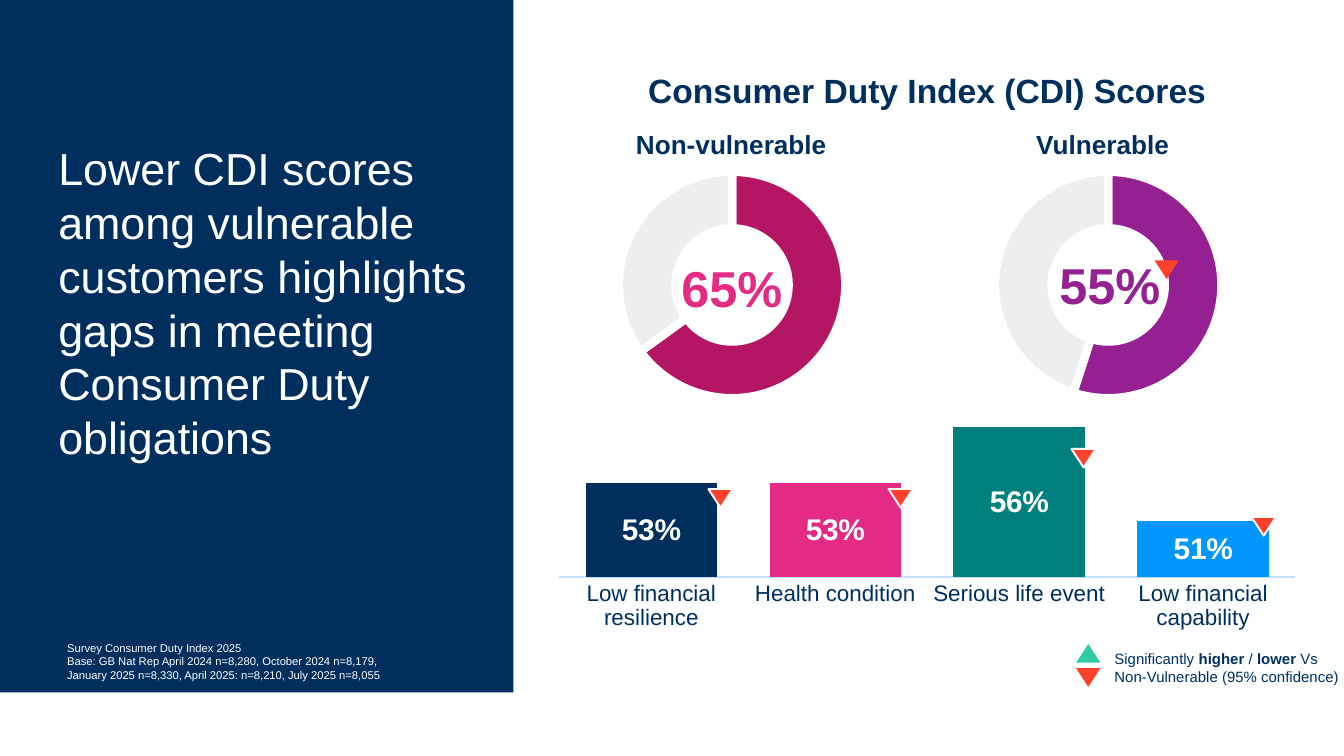
from pptx import Presentation
from pptx.chart.data import CategoryChartData
from pptx.dml.color import RGBColor
from pptx.enum.chart import XL_CHART_TYPE, XL_LABEL_POSITION, XL_TICK_MARK
from pptx.enum.shapes import MSO_SHAPE
from pptx.enum.text import MSO_ANCHOR, PP_ALIGN
from pptx.oxml import parse_xml
from pptx.oxml.ns import nsdecls
from pptx.util import Pt

DOUGHNUT, COLUMN = XL_CHART_TYPE.DOUGHNUT, XL_CHART_TYPE.COLUMN_CLUSTERED
RECT, TRIANGLE = MSO_SHAPE.RECTANGLE, MSO_SHAPE.ISOSCELES_TRIANGLE
LEFT, CENTER = PP_ALIGN.LEFT, PP_ALIGN.CENTER
TOP, LABEL_CENTER, NO_TICK = MSO_ANCHOR.TOP, XL_LABEL_POSITION.CENTER, XL_TICK_MARK.NONE

FONT, NAVY, WHITE, RED, GREEN = "Arial", "002F5E", "FEFFFF", "FF412C", "31CAA8"

TITLE = "Lower CDI scores among vulnerable customers highlights gaps in meeting Consumer Duty obligations"
HEADING = "Consumer Duty Index (CDI) Scores"
SOURCE = [
    [("Survey Consumer Duty Index 2025", False)],
    [("Base: GB Nat Rep April 2024 n=8,280, October 2024 n=8,179, "
      "January 2025 n=8,330, April 2025: n=8,210, July 2025 n=8,055", False)],
]
KEY = [[("Significantly ", False), ("higher", True), (" / ", False), ("lower ", True),
        ("Vs Non-Vulnerable (95% confidence)", False)]]
DONUTS = [
    ("Non-vulnerable", 65, "B51663", "E52A84", 303, (317.5, 148.5), (357, 137.5)),
    ("Vulnerable", 55, "942092", "942092", 504.5, (520, 141.5), (559.5, 136)),
]
BARS = [
    ("Low financial resilience", 0.53, NAVY, (379.5, 262)),
    ("Health condition", 0.53, "E52A84", (476, 262)),
    ("Serious life event", 0.56, "007F7F", (574, 240.5)),
    ("Low financial capability", 0.51, "0096FF", (670.5, 277)),
]


def rgb(code):
    """Turn a hex string into a colour."""
    return RGBColor.from_string(code)


def style(font, size, color, bold=False):
    """Set the face, size, colour and weight of a font."""
    font.name, font.size, font.bold = FONT, Pt(size), bold
    font.color.rgb = rgb(color)


def write(sp, paras, size, color, align=LEFT, inset=0):
    """Fill a shape with paragraphs made of (text, bold) runs."""
    tf = sp.text_frame
    tf.word_wrap, tf.vertical_anchor = True, TOP
    tf.margin_left = tf.margin_right = Pt(inset * 2)
    tf.margin_top = tf.margin_bottom = Pt(inset)
    for i, runs in enumerate(paras):
        p = tf.add_paragraph() if i else tf.paragraphs[0]
        p.alignment, p.line_spacing = align, Pt(size * 1.2)
        p.space_before = p.space_after = Pt(0)
        for text, bold in runs:
            r = p.add_run()
            r.text = text
            style(r.font, size, color, bold)


def add_text(s, box, paras, size, color, align=LEFT, inset=0):
    """Add a text box."""
    write(s.shapes.add_textbox(*map(Pt, box)), paras, size, color, align, inset)


def add_block(s, kind, box, color, outline=None, turn=0):
    """Add a filled preset shape."""
    sp = s.shapes.add_shape(kind, *map(Pt, box))
    sp.shadow.inherit, sp.rotation = False, turn
    sp.fill.solid()
    sp.fill.fore_color.rgb = rgb(color)
    if outline:
        sp.line.color.rgb, sp.line.width = rgb(outline), Pt(1)
    else:
        sp.line.fill.background()


def add_marker(s, at, color=RED, outline=None, turn=180):
    """Add a significance triangle, pointing down unless turned."""
    add_block(s, TRIANGLE, (*at, 13, 10), color, outline, turn)


def add_chart(s, kind, box, cats, values, colors, fmt="General"):
    """Add a one-series chart with a colour for each point."""
    data = CategoryChartData(number_format=fmt)
    data.categories = cats
    data.add_series("Series 1", values)
    chart = s.shapes.add_chart(kind, *map(Pt, box), data).chart
    chart.has_legend = chart.has_title = False
    style(chart.font, 10, NAVY)
    for i, color in enumerate(colors):
        fill = chart.plots[0].series[0].points[i].format.fill
        fill.solid()
        fill.fore_color.rgb = rgb(color)
    return chart


def add_donut(s, box, value, color):
    """Add a doughnut showing one share of 100."""
    chart = add_chart(s, DOUGHNUT, box, ["1", "2"], [value, 100 - value], [color, "ECEEEF"])
    for i in range(2):
        line = chart.plots[0].series[0].points[i].format.line
        line.color.rgb, line.width = rgb("FFFFFF"), Pt(4.5)
    area = chart.element.xpath(".//c:plotArea")[0]
    area.xpath(".//c:holeSize")[0].set("val", "65")
    for old in area.xpath("./c:layout"):
        area.remove(old)
    frame = {"x": 0.16, "y": 0.07, "w": 0.68, "h": 0.86}
    parts = ['<c:layoutTarget val="inner"/>']
    parts += [f'<c:{k}Mode val="edge"/>' for k in "xy"]
    parts += [f'<c:{k} val="{v}"/>' for k, v in frame.items()]
    area.insert(0, parse_xml(f'<c:layout {nsdecls("c")}><c:manualLayout>'
                             f'{"".join(parts)}</c:manualLayout></c:layout>'))


def add_bars(s, box):
    """Add the column chart of vulnerability types."""
    names, values, colors, _ = zip(*BARS)
    chart = add_chart(s, COLUMN, box, names, values, colors, "0%")
    plot, cat, val = chart.plots[0], chart.category_axis, chart.value_axis
    plot.gap_width, plot.vary_by_categories = 40, False
    val.minimum_scale, val.maximum_scale = 0.48, 0.57
    val.has_major_gridlines = val.visible = False
    cat.major_tick_mark = cat.minor_tick_mark = NO_TICK
    cat.format.line.color.rgb, cat.format.line.width = rgb("C1E0FF"), Pt(0.75)
    style(cat.tick_labels.font, 12, NAVY)
    plot.has_data_labels = True
    labels = plot.data_labels
    labels.show_value, labels.position = True, LABEL_CENTER
    labels.number_format, labels.number_format_is_linked = "0%", False
    style(labels.font, 16, WHITE, True)


def main():
    """Build the slide and save it."""
    prs = Presentation()
    prs.slide_width, prs.slide_height = Pt(720), Pt(405)
    s = prs.slides.add_slide(prs.slide_layouts[5])
    s.background.fill.solid()
    s.background.fill.fore_color.rgb = rgb(WHITE)

    add_block(s, RECT, (0, 0, 275, 371), NAVY)
    title = s.shapes.title
    title.left, title.top, title.width, title.height = map(Pt, (24, 72, 236, 181))
    s.shapes._spTree.append(title.element)
    write(title, [[(TITLE, False)]], 24, WHITE, inset=3.6)
    add_text(s, (36, 343.5, 188, 21.6), SOURCE, 6, WHITE)

    add_text(s, (316, 34, 361.5, 28.8), [[(HEADING, True)]], 18, NAVY, CENTER, 3.6)
    for name, value, color, ink, x, name_at, value_at in DONUTS:
        add_donut(s, (x, 81.5, 178.5, 142.5), value, color)
        add_text(s, (name_at[0], 65, name_at[1], 24), [[(name, True)]], 14, NAVY, CENTER, 3.6)
        add_text(s, (*value_at, 70, 32.4), [[(f"{value}%", True)]], 27, ink, CENTER)
    add_marker(s, (618.5, 139.5))

    add_bars(s, (291.5, 216, 410.5, 124))
    for *_, at in BARS:
        add_marker(s, at, outline=WHITE)

    add_marker(s, (576.5, 345), GREEN, turn=0)
    add_marker(s, (576.5, 358))
    add_text(s, (597, 348, 123, 19.2), KEY, 8, NAVY)
    prs.save("out.pptx")


if __name__ == "__main__":
    main()
